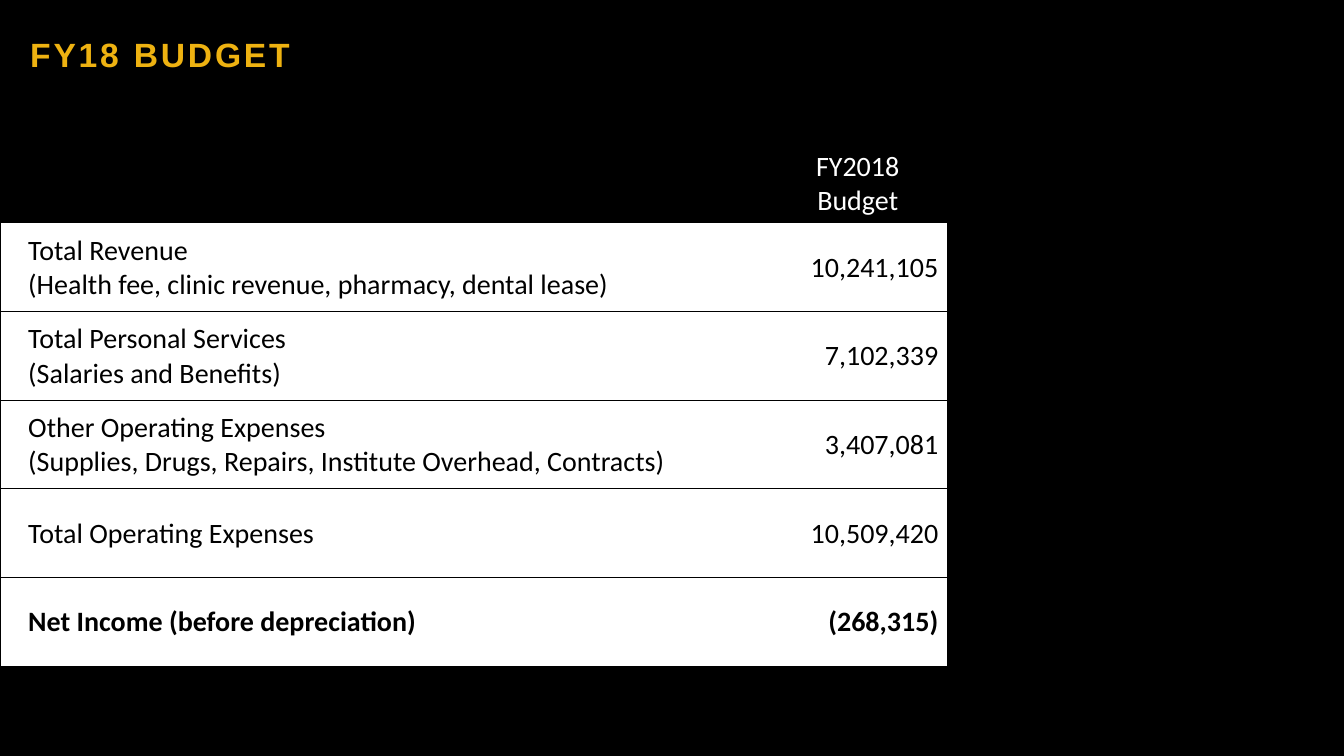
"""Build the FY18 budget slide."""
from lxml import etree
from pptx import Presentation
from pptx.dml.color import RGBColor
from pptx.enum.shapes import MSO_SHAPE
from pptx.enum.text import MSO_ANCHOR, PP_ALIGN
from pptx.oxml.ns import qn
from pptx.util import Pt

BLACK = RGBColor(0x00, 0x00, 0x00)
WHITE = RGBColor(0xFF, 0xFF, 0xFF)
GOLD = RGBColor(0xEE, 0xB2, 0x11)
RECT = MSO_SHAPE.RECTANGLE
MIDDLE = MSO_ANCHOR.MIDDLE
LEFT, CENTER, RIGHT = PP_ALIGN.LEFT, PP_ALIGN.CENTER, PP_ALIGN.RIGHT

COLS = (548.64, 128.16)
HEAD, ROW = 56.16, 63.36
HEADER = ("", "FY2018\nBudget")
ROWS = (
    ("Total Revenue\n(Health fee, clinic revenue, pharmacy, dental lease)", "10,241,105"),
    ("Total Personal Services\n(Salaries and Benefits)", "7,102,339"),
    ("Other Operating Expenses\n(Supplies, Drugs, Repairs, Institute Overhead, Contracts)",
     "3,407,081"),
    ("Total Operating Expenses", "10,509,420"),
    ("Net Income (before depreciation)", "(268,315)"),
)


def style(para, name, size, color, bold, align):
    """Set the font and alignment of a paragraph."""
    para.alignment = align
    font = para.font
    font.name, font.size, font.bold = name, Pt(size), bold
    font.color.rgb = color


def add_title(slide, text):
    """Add the title bar with spaced letters."""
    bar = slide.shapes.add_shape(RECT, 0, 0, Pt(678.24), Pt(77.76))
    bar.shadow.inherit = False
    bar.fill.solid()
    bar.fill.fore_color.rgb = BLACK
    bar.line.fill.background()
    frame = bar.text_frame
    frame.word_wrap = True
    frame.vertical_anchor = MIDDLE
    frame.margin_left, frame.margin_right = Pt(21.6), Pt(7.2)
    frame.margin_top = frame.margin_bottom = Pt(3.6)
    frame.text = text
    para = frame.paragraphs[0]
    style(para, "Arial", 24, GOLD, True, LEFT)
    para.runs[0].font._element.set("spc", "200")


def add_edges(cell, sides):
    """Draw black lines on the given sides and clear the others."""
    props = cell._tc.get_or_add_tcPr()
    for side in "LRTB":
        line = etree.SubElement(props, qn(f"a:ln{side}"), w=str(Pt(1)))
        if side in sides:
            fill = etree.SubElement(line, qn("a:solidFill"))
            etree.SubElement(fill, qn("a:srgbClr"), val=str(BLACK))
        else:
            etree.SubElement(line, qn("a:noFill"))


def fill_cell(cell, text, back, color, bold, align, sides, left, right):
    """Write and format one table cell."""
    add_edges(cell, sides)
    cell.fill.solid()
    cell.fill.fore_color.rgb = back
    cell.vertical_anchor = MIDDLE
    cell.margin_left, cell.margin_right = Pt(left), Pt(right)
    cell.margin_top, cell.margin_bottom = Pt(0.72), 0
    cell.text = text
    for para in cell.text_frame.paragraphs:
        style(para, "Calibri", 20, color, bold, align)


def add_budget(slide):
    """Add the budget table."""
    high = HEAD + ROW * len(ROWS)
    frame = slide.shapes.add_table(len(ROWS) + 1, len(COLS), 0, Pt(102.96),
                                   Pt(sum(COLS)), Pt(high))
    table = frame.table
    table.first_row = table.horz_banding = False
    for col, width in zip(table.columns, COLS):
        col.width = Pt(width)
    for row in table.rows:
        row.height = Pt(ROW)
    table.rows[0].height = Pt(HEAD)
    fill_cell(table.cell(0, 0), HEADER[0], BLACK, WHITE, False, LEFT, "LTB", 20.16, 0.72)
    fill_cell(table.cell(0, 1), HEADER[1], BLACK, WHITE, False, CENTER, "RTB", 0.72, 0.72)
    for i, (label, value) in enumerate(ROWS, 1):
        bold = i == len(ROWS)
        fill_cell(table.cell(i, 0), label, WHITE, BLACK, bold, LEFT, "LTB", 20.16, 0.72)
        fill_cell(table.cell(i, 1), value, WHITE, BLACK, bold, RIGHT, "RTB", 0.72, 6.48)


def main():
    """Build and save the slide."""
    deck = Presentation()
    deck.slide_width, deck.slide_height = Pt(960), Pt(540)
    slide = deck.slides.add_slide(deck.slide_layouts[6])
    back = slide.background.fill
    back.solid()
    back.fore_color.rgb = BLACK
    add_title(slide, "FY18 BUDGET")
    add_budget(slide)
    deck.save("out.pptx")


if __name__ == "__main__":
    main()
